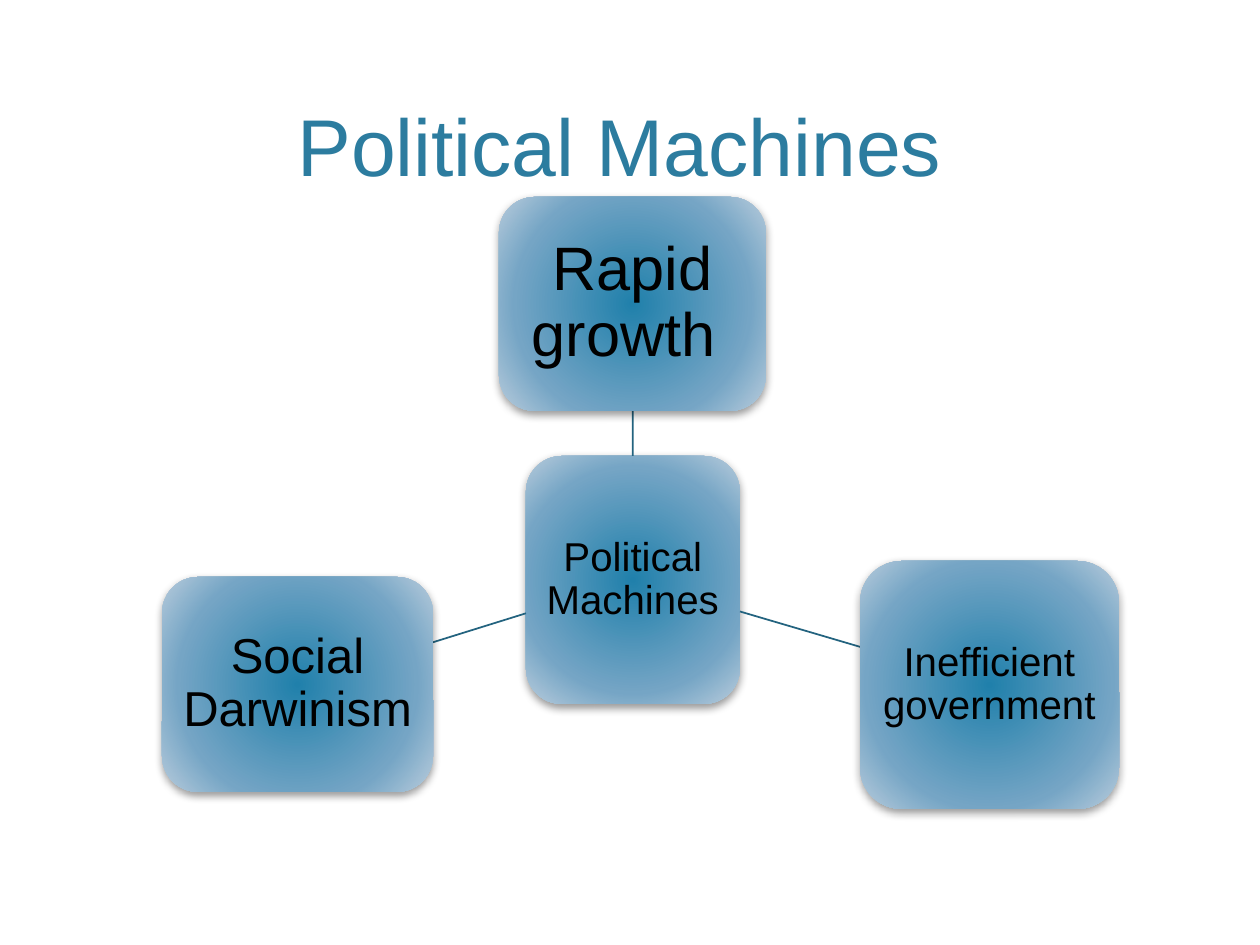
"""Build a slide with a hub-and-spoke diagram of political machines."""
from dataclasses import dataclass

from lxml.etree import SubElement
from pptx import Presentation
from pptx.dml.color import RGBColor
from pptx.enum.shapes import MSO_CONNECTOR, MSO_SHAPE
from pptx.enum.text import MSO_ANCHOR, PP_ALIGN
from pptx.oxml.ns import qn
from pptx.util import Emu, Pt

TITLE = ("Political Machines ", (76, 15, 1109, 184))
HUB = ("Political Machines", (526, 456, 214, 248), 23, 8)
SPOKES = [
    ("Rapid growth ", (499, 197, 267, 214), 35, 12),
    ("Inefficient government", (860, 561, 259, 248), 23, 8),
    ("Social Darwinism ", (162, 577, 271, 215), 28, 9),
]


@dataclass(frozen=True)
class Theme:
    font: str = "Arial"
    title: str = "2C7C9F"
    title_size: int = 46
    text: str = "000000"
    line: str = "23637F"
    line_width: int = 1
    shadow: str = "000000"
    gradient: tuple = ((0, "2080AB"), (69, "75A5C5"), (100, "B8CCDC"))


THEME = Theme()


def px(length):
    return Emu(round(length * 914400 / 126))


def add_element(parent, tag, **attributes):
    return SubElement(parent, qn(tag), {name: str(value) for name, value in attributes.items()})


def write_text(shape, text, size, color, anchor):
    text_frame = shape.text_frame
    text_frame.text = text
    text_frame.word_wrap = True
    text_frame.vertical_anchor = anchor
    paragraph = text_frame.paragraphs[0]
    paragraph.alignment = PP_ALIGN.CENTER
    font = paragraph.runs[0].font
    font.name = THEME.font
    font.size = Pt(size)
    font.color.rgb = RGBColor.from_string(color)
    return paragraph


def fill_radially(shape):
    gradient = add_element(shape.element.spPr, "a:gradFill", rotWithShape=1)
    stops = add_element(gradient, "a:gsLst")
    for position, color in THEME.gradient:
        stop = add_element(stops, "a:gs", pos=position * 1000)
        add_element(stop, "a:srgbClr", val=color)
    circle = add_element(gradient, "a:path", path="circle")
    add_element(circle, "a:fillToRect", l=100000, t=100000, r=100000, b=100000)


def add_shadow(shape):
    shape.shadow.inherit = False
    effects = shape.element.spPr.find(qn("a:effectLst"))
    shadow = add_element(effects, "a:outerShdw", blurRad=Pt(5), dist=Pt(2),
                         dir=90 * 60000, rotWithShape=0)
    color = add_element(shadow, "a:srgbClr", val=THEME.shadow)
    add_element(color, "a:alpha", val=40000)


def add_node(slide, text, box, size, inset):
    shape = slide.shapes.add_shape(MSO_SHAPE.ROUNDED_RECTANGLE, *map(px, box))
    fill_radially(shape)
    shape.line.fill.background()
    add_shadow(shape)
    paragraph = write_text(shape, text, size, THEME.text, MSO_ANCHOR.MIDDLE)
    paragraph.line_spacing = 0.9
    text_frame = shape.text_frame
    text_frame.margin_left = text_frame.margin_right = px(inset)
    text_frame.margin_top = text_frame.margin_bottom = px(inset)


def center(box):
    left, top, width, height = box
    return left + width / 2, top + height / 2


def edge_point(box, target):
    """Find where the ray from the box center to the target leaves the box."""
    x, y = center(box)
    run, rise = target[0] - x, target[1] - y
    share = 1 / max(abs(run) * 2 / box[2], abs(rise) * 2 / box[3])
    return x + run * share, y + rise * share


def add_link(slide, start_box, end_box):
    start = edge_point(start_box, center(end_box))
    end = edge_point(end_box, center(start_box))
    connector = slide.shapes.add_connector(MSO_CONNECTOR.STRAIGHT, *map(px, start + end))
    connector.line.color.rgb = RGBColor.from_string(THEME.line)
    connector.line.width = Pt(THEME.line_width)
    add_element(connector.element.spPr, "a:effectLst")


def main():
    presentation = Presentation()
    presentation.slide_width, presentation.slide_height = px(1260), px(945)
    slide = presentation.slides.add_slide(presentation.slide_layouts[5])

    title = slide.shapes.title
    text, box = TITLE
    title.left, title.top, title.width, title.height = map(px, box)
    write_text(title, text, THEME.title_size, THEME.title, MSO_ANCHOR.BOTTOM)

    add_node(slide, *HUB)
    for spoke in SPOKES:
        add_link(slide, HUB[1], spoke[1])
        add_node(slide, *spoke)

    presentation.save("out.pptx")


if __name__ == "__main__":
    main()
